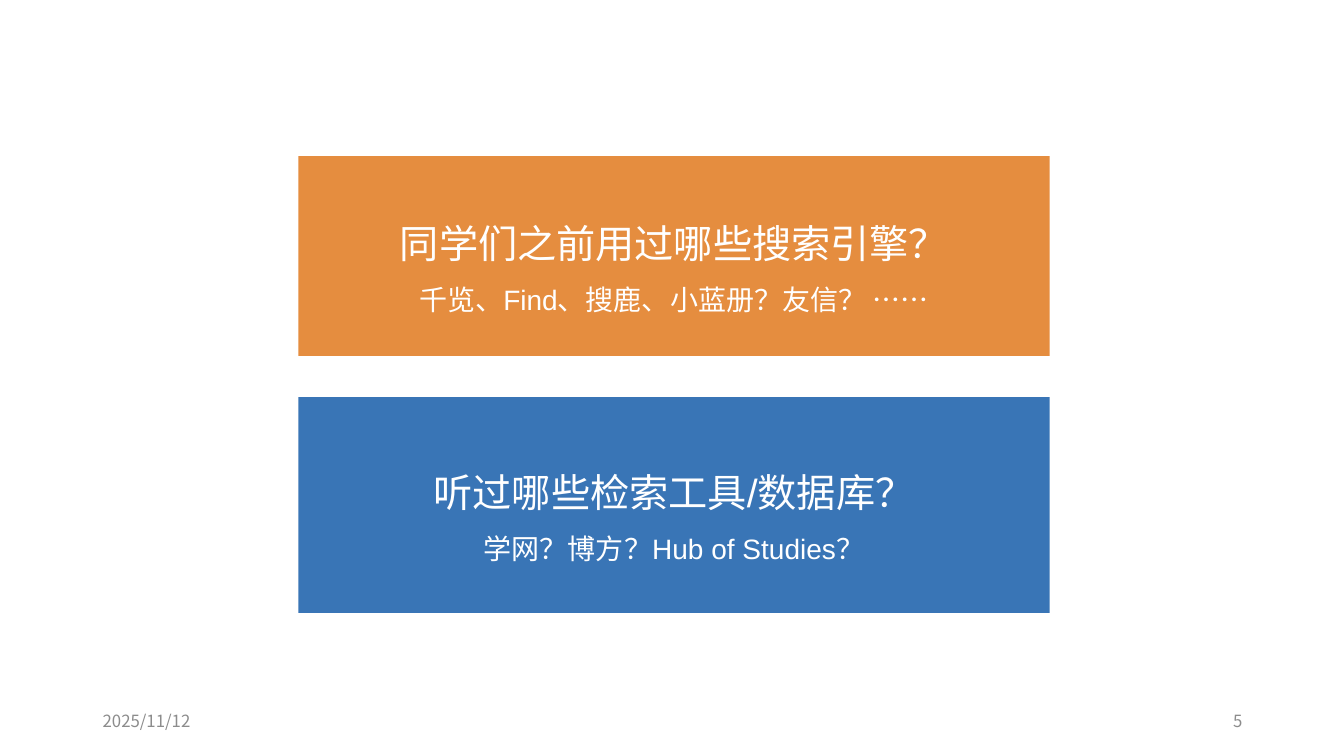
from dataclasses import dataclass

from pptx import Presentation
from pptx.dml.color import RGBColor
from pptx.enum.shapes import MSO_SHAPE
from pptx.enum.text import MSO_ANCHOR, PP_ALIGN
from pptx.oxml.ns import qn
from pptx.util import Emu, Pt

RECT = MSO_SHAPE.RECTANGLE
MIDDLE = MSO_ANCHOR.MIDDLE
LEFT, CENTER, RIGHT = PP_ALIGN.LEFT, PP_ALIGN.CENTER, PP_ALIGN.RIGHT

SCALE = 9144  # EMU in one px, 100 px to the inch
HAN = "Noto Sans CJK SC"
LATIN = "Arial"
WHITE, GREY = "FFFFFF", "8C8C8C"


@dataclass
class Card:
    top: int
    height: int
    fill: str
    title: str
    detail: str


@dataclass
class Note:
    left: int
    text: str
    align: PP_ALIGN


CARDS = [
    Card(155, 198, "DF710F", "同学们之前用过哪些搜索引擎？",
         "千览、Find、搜鹿、小蓝册？友信？ ……"),
    Card(394, 214, "0853A4", "听过哪些检索工具/数据库？",
         "学网？博方？Hub of Studies？"),
]
NOTES = [Note(942, "5", RIGHT), Note(92, "2025/11/12", LEFT)]


def px(size: int) -> Emu:
    return Emu(size * SCALE)


def color(code: str) -> RGBColor:
    return RGBColor.from_string(code)


def write(para, text: str, *, size: int, font: str, ink: str,
          align: PP_ALIGN, space: float = 1.0) -> None:
    para.alignment = align
    para.line_spacing = space
    run = para.add_run()
    run.text = text
    run.font.size = Pt(size)
    run.font.name = font
    run.font.color.rgb = color(ink)
    props = run.font._element
    east = props.makeelement(qn("a:ea"), {"typeface": HAN})
    props.find(qn("a:latin")).addnext(east)


def fade(shape, share: int) -> None:
    """Set the opacity of a solid fill, in percent."""
    tint = shape.fill._xPr.find(qn("a:solidFill"))[0]
    alpha = tint.makeelement(qn("a:alpha"), {"val": str(share * 1000)})
    tint.append(alpha)


def draw_card(slide, card: Card) -> None:
    shape = slide.shapes.add_shape(
        RECT, px(296), px(card.top), px(745), px(card.height))
    shape.shadow.inherit = False
    shape.fill.solid()
    shape.fill.fore_color.rgb = color(card.fill)
    fade(shape, 80)
    shape.line.fill.background()
    frame = shape.text_frame
    frame.word_wrap = True
    frame.vertical_anchor = MIDDLE
    style = dict(font=LATIN, ink=WHITE, align=CENTER, space=1.5)
    write(frame.paragraphs[0], card.title, size=28, **style)
    write(frame.add_paragraph(), card.detail, size=20, **style)


def draw_note(slide, note: Note) -> None:
    box = slide.shapes.add_textbox(px(note.left), px(695), px(300), px(40))
    frame = box.text_frame
    frame.word_wrap = True
    frame.vertical_anchor = MIDDLE
    write(frame.paragraphs[0], note.text, size=12, font=HAN, ink=GREY,
          align=note.align)


def main() -> None:
    deck = Presentation()
    deck.slide_width, deck.slide_height = px(1333), px(750)
    slide = deck.slides.add_slide(deck.slide_layouts[6])
    for note in NOTES:
        draw_note(slide, note)
    for card in CARDS:
        draw_card(slide, card)
    deck.save("out.pptx")


if __name__ == "__main__":
    main()
